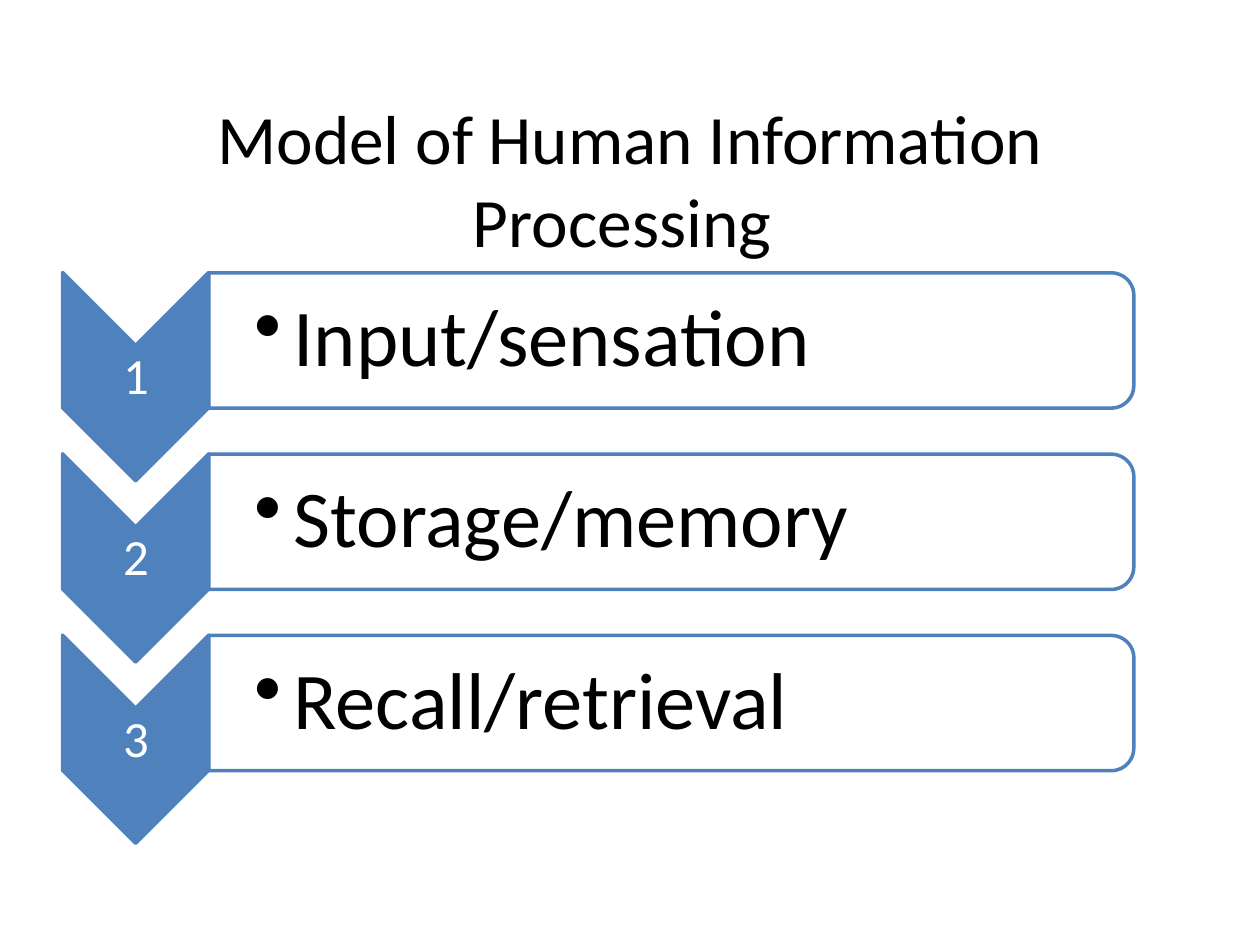
import pptx
import pptx.dml.color
import pptx.enum.shapes
import pptx.enum.text
import pptx.oxml
import pptx.oxml.ns
import pptx.util

Pt = pptx.util.Pt
SHAPES = pptx.enum.shapes.MSO_SHAPE
CENTER = pptx.enum.text.PP_ALIGN.CENTER
LEFT = pptx.enum.text.PP_ALIGN.LEFT

BLUE = "4F81BD"
WHITE = "FFFFFF"
BLACK = "000000"
STEPS = ["Input/sensation", "Storage/memory", "Recall/retrieval"]
STEP_PITCH = 103.6


def color(value):
    return pptx.dml.color.RGBColor.from_string(value)


def apply_format(target, values):
    for name, value in values.items():
        setattr(target, name, value)


def place(shape, left, top, width, height):
    bounds = {"left": left, "top": top, "width": width, "height": height}
    apply_format(shape, {name: Pt(value) for name, value in bounds.items()})


def format_frame(frame, insets):
    sides = ("margin_left", "margin_top", "margin_right", "margin_bottom")
    apply_format(frame, {
        "word_wrap": True,
        "auto_size": pptx.enum.text.MSO_AUTO_SIZE.NONE,
        "vertical_anchor": pptx.enum.text.MSO_ANCHOR.MIDDLE,
    })
    apply_format(frame, {side: Pt(inset) for side, inset in zip(sides, insets)})


def format_font(font, size, text_color):
    apply_format(font, {"name": "Calibri", "size": Pt(size), "bold": False})
    font.color.rgb = color(text_color)


def add_title(slide, text):
    title = slide.shapes.title
    place(title, 36, 72, 648, 60)
    format_frame(title.text_frame, (7.2, 3.6, 7.2, 3.6))
    paragraph = title.text_frame.paragraphs[0]
    paragraph.text = text
    paragraph.alignment = CENTER
    format_font(paragraph.runs[0].font, 39.6, BLACK)


def add_rotated_shape(group, kind, bounds, fill_color):
    shape = group.shapes.add_shape(kind, 0, 0, 0, 0)
    place(shape, *bounds)
    shape.rotation = 90
    shape.shadow.inherit = False
    shape.fill.solid()
    shape.fill.fore_color.rgb = color(fill_color)
    shape.line.color.rgb = color(BLUE)
    shape.line.width = Pt(2)
    return shape


def set_opacity(shape, percent):
    fill = shape.fill._xPr.find(pptx.oxml.ns.qn("a:solidFill"))
    alpha = pptx.oxml.parse_xml(
        f'<a:alpha {pptx.oxml.ns.nsdecls("a")} val="{percent * 1000}"/>')
    fill[0].append(alpha)


def add_label(group, text, bounds, insets, size, text_color, alignment):
    box = group.shapes.add_textbox(0, 0, 0, 0)
    place(box, *bounds)
    format_frame(box.text_frame, insets)
    paragraph = box.text_frame.paragraphs[0]
    paragraph.text = text
    apply_format(paragraph, {"alignment": alignment, "line_spacing": 0.9})
    format_font(paragraph.runs[0].font, size, text_color)
    return paragraph


def add_bullet(paragraph, indent):
    paragraph.level = 1
    properties = paragraph._p.get_or_add_pPr()
    properties.set("marL", str(Pt(indent)))
    properties.set("indent", str(-Pt(indent)))
    properties.append(pptx.oxml.parse_xml(
        f'<a:buChar {pptx.oxml.ns.nsdecls("a")} char="•"/>'))


def add_step(group, index, text):
    offset = index * STEP_PITCH
    add_rotated_shape(group, SHAPES.CHEVRON,
                      (18, 173.5 + offset, 119, 83.5), BLUE)
    add_label(group, str(index + 1), (36, 198 + offset, 83.5, 36),
              (1.4, 1.4, 1.4, 1.4), 29, WHITE, CENTER)
    panel = add_rotated_shape(group, SHAPES.ROUND_2_SAME_RECTANGLE,
                              (345, -69.7 + offset, 77.3, 528.5), WHITE)
    set_opacity(panel, 90)
    paragraph = add_label(group, text, (119.5, 159.7 + offset, 524.8, 69.8),
                          (25.8, 2.3, 2.3, 2.3), 46, BLACK, LEFT)
    add_bullet(paragraph, 22.5)


def main():
    presentation = pptx.Presentation()
    apply_format(presentation, {"slide_width": Pt(720), "slide_height": Pt(540)})
    slide = presentation.slides.add_slide(presentation.slide_layouts[5])
    slide.background.fill.solid()
    slide.background.fill.fore_color.rgb = color(WHITE)
    add_title(slide, "Model of Human Information Processing ")
    group = slide.shapes.add_group_shape()
    for index, text in enumerate(STEPS):
        add_step(group, index, text)
    presentation.save("out.pptx")


if __name__ == "__main__":
    main()
